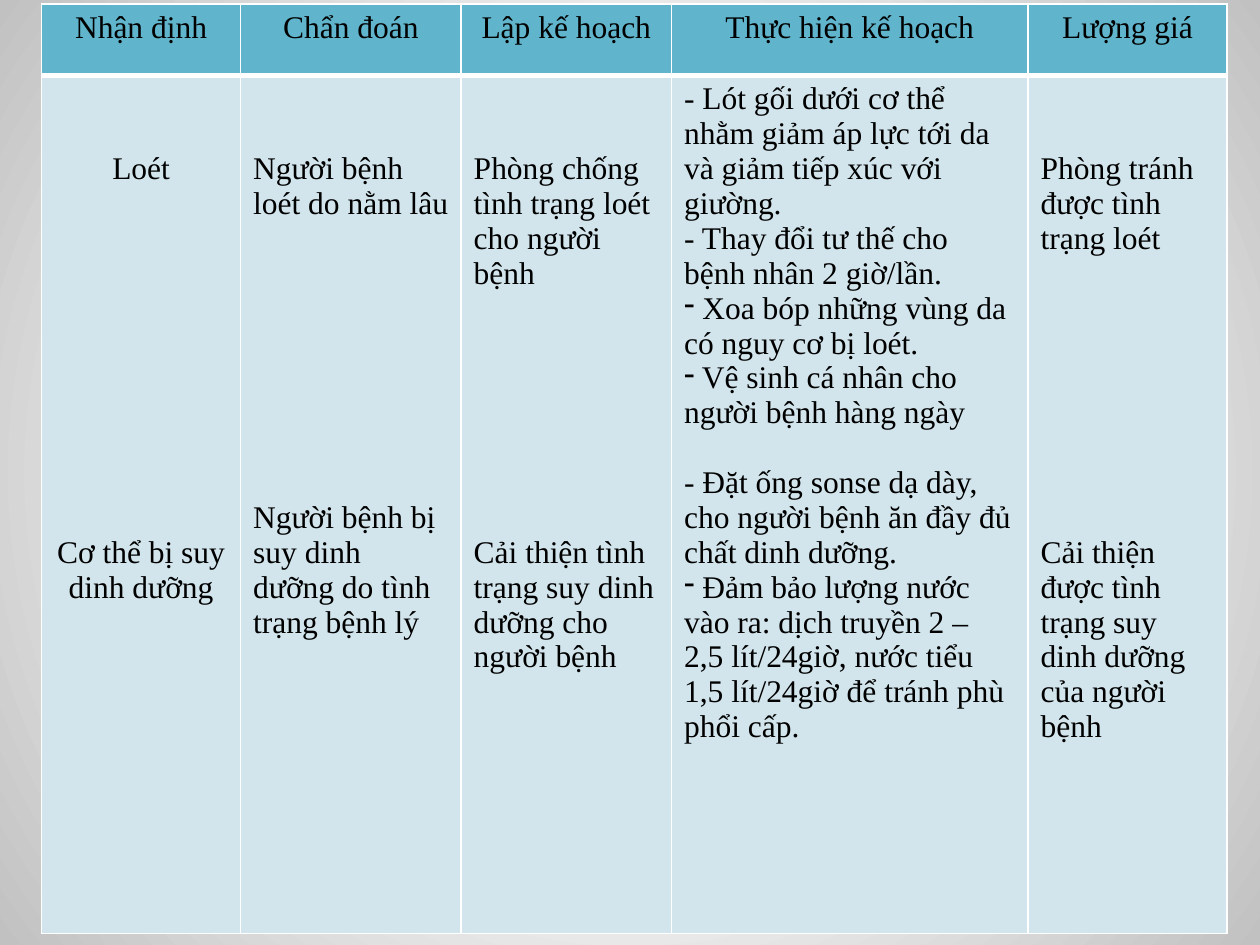
from pptx import Presentation
from pptx.dml.color import RGBColor
from pptx.enum.text import PP_ALIGN as Align
from pptx.oxml import parse_xml
from pptx.oxml.ns import nsdecls, qn
from pptx.util import Inches, Pt

WHITE = RGBColor(0xFF, 0xFF, 0xFF)
GRAY = RGBColor(0xC1, 0xC1, 0xC1)
BLACK = RGBColor(0, 0, 0)
TEAL = RGBColor(0x60, 0xB5, 0xCC)
PALE = RGBColor(0xD2, 0xE5, 0xEC)
FONT = "Times New Roman"
SIZE = 18
LINE = 19.93
COLS = [1.58, 1.75, 1.67, 2.83, 1.58]
ROWS = [0.57, 6.81]
HEADS = ["Nhận định", "Chẩn đoán", "Lập kế hoạch", "Thực hiện kế hoạch", "Lượng giá"]
BODY = [
    (2, [(0, "Loét"), (10, "Cơ thể bị suy dinh dưỡng")]),
    (2, [(0, "Người bệnh loét do nằm lâu"),
         (8, "Người bệnh bị suy dinh dưỡng do tình trạng bệnh lý")]),
    (2, [(0, "Phòng chống tình trạng loét cho người bệnh"),
         (7, "Cải thiện tình trạng suy dinh dưỡng cho người bệnh")]),
    (0, [(0, "- Lót gối dưới cơ thể nhằm giảm áp lực tới da và giảm tiếp xúc với giường."),
         (0, "- Thay đổi tư thế cho bệnh nhân 2 giờ/lần."),
         (0, " Xoa bóp những vùng da có nguy cơ bị loét."),
         (0, " Vệ sinh cá nhân cho người bệnh hàng ngày"),
         (1, "- Đặt ống sonse dạ dày, cho người bệnh ăn đầy đủ chất dinh dưỡng."),
         (0, " Đảm bảo lượng nước vào ra: dịch truyền 2 – 2,5 lít/24giờ, "
             "nước tiểu 1,5 lít/24giờ để tránh phù phổi cấp.")]),
    (2, [(0, "Phòng tránh được tình trạng loét"),
         (8, "Cải thiện được tình trạng suy dinh dưỡng của người bệnh")]),
]


def set_back(slide):
    fill = slide.background.fill
    fill.gradient()
    for stop, place, color in zip(fill.gradient_stops, (0.35, 1), (WHITE, GRAY)):
        stop.position = place
        stop.color.rgb = color
    lin = next(slide.element.iter(qn("a:lin")))
    lin.getparent().replace(lin, parse_xml(
        f'<a:path {nsdecls("a")} path="circle">'
        '<a:fillToRect l="50000" t="50000" r="50000" b="50000"/></a:path>'))


def style_cell(cell, fill, thick):
    props = cell._tc.get_or_add_tcPr()
    for side in "LRTB":
        width = Pt(3 if side == thick else 1)
        props.append(parse_xml(
            f'<a:ln{side} {nsdecls("a")} w="{width}"><a:solidFill>'
            f'<a:srgbClr val="{WHITE}"/></a:solidFill></a:ln{side}>'))
    cell.fill.solid()
    cell.fill.fore_color.rgb = fill


def add_dash(para):
    props = para._p.get_or_add_pPr()
    props.set("marL", "0")
    props.set("indent", "0")
    props.append(parse_xml(f'<a:buFontTx {nsdecls("a")}/>'))
    props.append(parse_xml(f'<a:buChar {nsdecls("a")} char="-"/>'))


def add_text(cell, items, align):
    frame = cell.text_frame
    for i, (gap, text) in enumerate(items):
        para = frame.add_paragraph() if i else frame.paragraphs[0]
        para.alignment = align
        if gap:
            para.space_before = Pt(gap * LINE)
        if text.startswith(" "):
            add_dash(para)
        run = para.add_run()
        run.text = text
        font = run.font
        font.name, font.size, font.bold = FONT, Pt(SIZE), False
        font.color.rgb = BLACK


def add_plan(slide):
    table = slide.shapes.add_table(
        len(ROWS), len(COLS), Inches(0.33), Inches(0.03),
        Inches(sum(COLS)), Inches(sum(ROWS))).table
    for row, high in zip(table.rows, ROWS):
        row.height = Inches(high)
    for i, (wide, head, (skip, items)) in enumerate(zip(COLS, HEADS, BODY)):
        table.columns[i].width = Inches(wide)
        top, low = table.cell(0, i), table.cell(1, i)
        style_cell(top, TEAL, "B")
        add_text(top, [(0, head)], Align.CENTER)
        style_cell(low, PALE, "T")
        low.margin_top = Inches(0.05) + Pt(skip * LINE)
        add_text(low, items, Align.LEFT if i else Align.CENTER)


def main():
    deck = Presentation()
    deck.slide_width, deck.slide_height = Inches(10), Inches(7.5)
    slide = deck.slides.add_slide(deck.slide_layouts[6])
    set_back(slide)
    add_plan(slide)
    deck.save("out.pptx")


if __name__ == "__main__":
    main()
